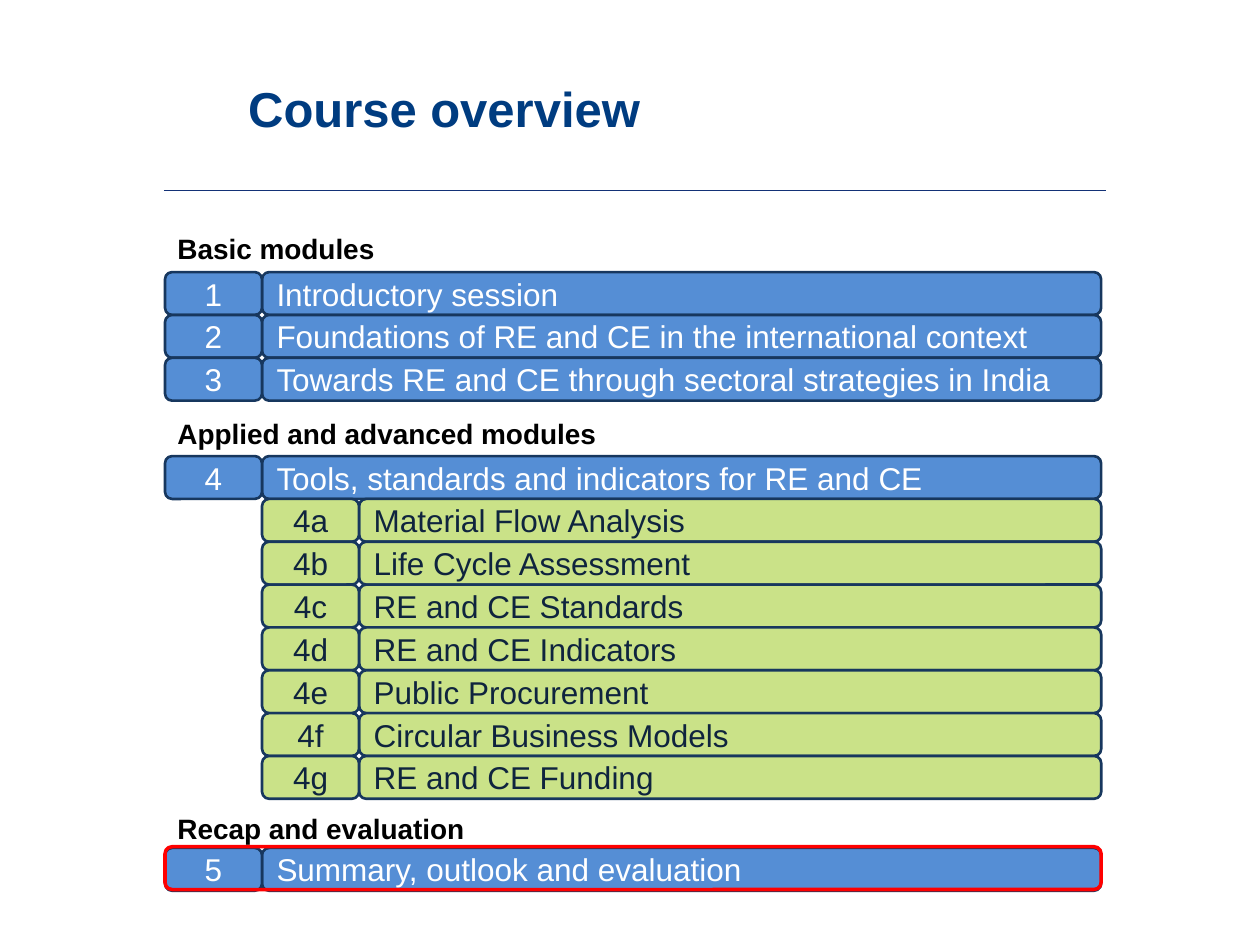
from dataclasses import dataclass

from lxml.etree import SubElement
from pptx import Presentation
from pptx.dml.color import RGBColor
from pptx.enum.shapes import MSO_CONNECTOR, MSO_SHAPE
from pptx.enum.text import MSO_ANCHOR, PP_ALIGN
from pptx.oxml.ns import qn
from pptx.util import Inches, Pt


@dataclass(frozen=True)
class Theme:
    font: str = "Arial"
    title_size: int = 28
    heading_size: int = 16
    module_size: int = 18
    title: str = "003C80"
    heading: str = "000000"
    rule: str = "133176"
    outline: str = "17375E"
    module_fill: str = "558ED5"
    module_text: str = "FFFFFF"
    submodule_fill: str = "CAE288"
    submodule_text: str = "0F243E"
    highlight: str = "FF0000"


LEFT, RIGHT = 1.31, 8.74
NUMBER_WIDTH = 0.77
ROW_HEIGHT = 0.34

BASIC_MODULES = [
    ("1", "Introductory session"),
    ("2", "Foundations of RE and CE in the international context"),
    ("3", "Towards RE and CE through sectoral strategies in India"),
]
ADVANCED_MODULES = [("4", "Tools, standards and indicators for RE and CE")]
SUBMODULES = [
    ("4a", "Material Flow Analysis"),
    ("4b", "Life Cycle Assessment"),
    ("4c", "RE and CE Standards"),
    ("4d", "RE and CE Indicators"),
    ("4e", "Public Procurement"),
    ("4f", "Circular Business Models"),
    ("4g", "RE and CE Funding"),
]
RECAP_MODULES = [("5", "Summary, outlook and evaluation")]


class SlideBuilder:
    """Holds the theme and the slide that elements are added to."""

    def __init__(self, slide, theme):
        self.slide = slide
        self.theme = theme

    def add_text(self, text_frame, text, size, color, bold=False, align=PP_ALIGN.LEFT):
        paragraph = text_frame.paragraphs[0]
        paragraph.alignment = align
        run = paragraph.add_run()
        run.text = text
        run.font.name = self.theme.font
        run.font.size = Pt(size)
        run.font.bold = bold
        run.font.color.rgb = RGBColor.from_string(color)

    def title(self, text, left, top, width, height):
        title = self.slide.shapes.title
        title.left, title.top = Inches(left), Inches(top)
        title.width, title.height = Inches(width), Inches(height)
        title.text_frame.vertical_anchor = MSO_ANCHOR.MIDDLE
        self.add_text(title.text_frame, text, self.theme.title_size, self.theme.title, bold=True)

    def rule(self, left, right, y):
        connector = self.slide.shapes.add_connector(
            MSO_CONNECTOR.STRAIGHT, Inches(left), Inches(y), Inches(right), Inches(y))
        connector.line.color.rgb = RGBColor.from_string(self.theme.rule)
        connector.line.width = Pt(0.75)
        SubElement(connector.element.spPr, qn("a:effectLst"))

    def heading(self, text, top):
        box = self.slide.shapes.add_textbox(
            Inches(LEFT), Inches(top), Inches(5), Inches(0.37))
        box.text_frame.word_wrap = True
        self.add_text(
            box.text_frame, text, self.theme.heading_size, self.theme.heading, bold=True)

    def rounded_box(self, left, top, width, line_color, line_width, fill=None):
        shape = self.slide.shapes.add_shape(
            MSO_SHAPE.ROUNDED_RECTANGLE,
            Inches(left), Inches(top), Inches(width), Inches(ROW_HEIGHT))
        shape.shadow.inherit = False
        if fill:
            shape.fill.solid()
            shape.fill.fore_color.rgb = RGBColor.from_string(fill)
        else:
            shape.fill.background()
        shape.line.color.rgb = RGBColor.from_string(line_color)
        shape.line.width = Pt(line_width)
        return shape

    def module_rows(self, modules, left, top, fill, color):
        """Stack rows of a number box and a name box that reaches the right edge."""
        name_left = left + NUMBER_WIDTH
        for index, (number, name) in enumerate(modules):
            row_top = top + index * ROW_HEIGHT
            cells = [
                (name, name_left, RIGHT - name_left, PP_ALIGN.LEFT),
                (number, left, NUMBER_WIDTH, PP_ALIGN.CENTER),
            ]
            for text, cell_left, width, align in cells:
                shape = self.rounded_box(
                    cell_left, row_top, width, self.theme.outline, 1.5, fill)
                shape.text_frame.word_wrap = True
                shape.text_frame.vertical_anchor = MSO_ANCHOR.MIDDLE
                self.add_text(shape.text_frame, text, self.theme.module_size, color, align=align)

    def highlight(self, top):
        self.rounded_box(LEFT, top, RIGHT - LEFT, self.theme.highlight, 2)


def main():
    presentation = Presentation()
    presentation.slide_width, presentation.slide_height = Inches(10), Inches(7.5)
    theme = Theme()
    title_only = presentation.slide_layouts[5]
    builder = SlideBuilder(presentation.slides.add_slide(title_only), theme)

    builder.rule(1.3, 8.78, 1.51)
    builder.title("Course overview", 1.87, 0.3, 6.91, 1.11)

    sections = [
        ("Basic modules", 1.79, BASIC_MODULES, 2.16),
        ("Applied and advanced modules", 3.26, ADVANCED_MODULES, 3.62),
        ("Recap and evaluation", 6.39, RECAP_MODULES, 6.73),
    ]
    for heading, heading_top, modules, rows_top in sections:
        builder.module_rows(modules, LEFT, rows_top, theme.module_fill, theme.module_text)
        builder.heading(heading, heading_top)
    builder.module_rows(
        SUBMODULES, LEFT + NUMBER_WIDTH, 3.96, theme.submodule_fill, theme.submodule_text)
    builder.highlight(6.72)

    presentation.save("out.pptx")


if __name__ == "__main__":
    main()
